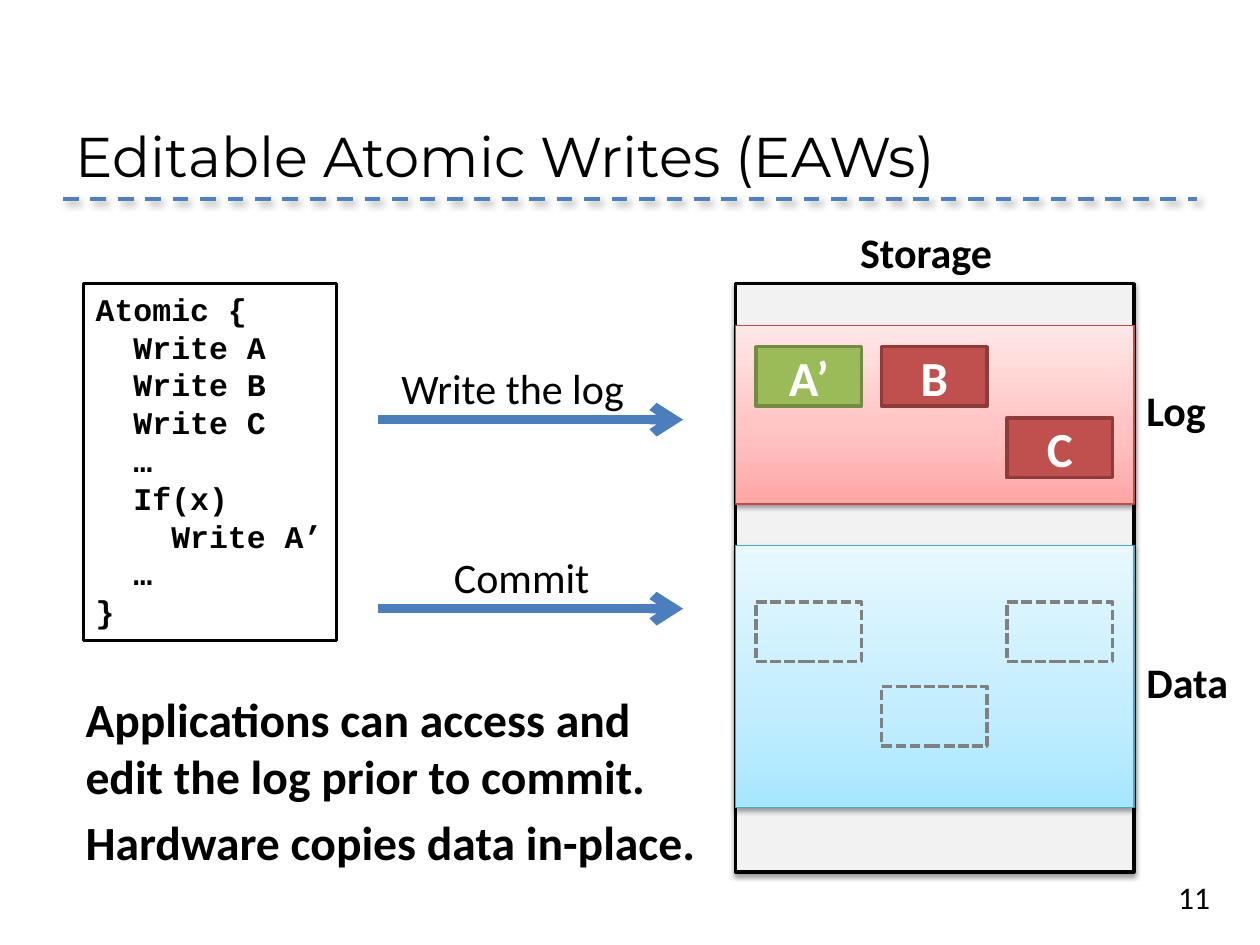
import copy
from dataclasses import dataclass

import pptx
import pptx.dml.color
import pptx.enum.dml
import pptx.enum.shapes
import pptx.enum.text
import pptx.oxml
import pptx.oxml.ns
import pptx.util

Cm, Pt = pptx.util.Cm, pptx.util.Pt
ALIGN = pptx.enum.text.PP_ALIGN
ANCHOR = pptx.enum.text.MSO_ANCHOR
AUTO_SIZE = pptx.enum.text.MSO_AUTO_SIZE
DASH = pptx.enum.dml.MSO_LINE


@dataclass(frozen=True)
class Theme:
    text_font: str = "Calibri"
    title_font: str = "Montserrat"
    code_font: str = "Courier New"
    title_size: float = 32
    block_size: float = 28
    body_size: float = 27.2
    label_size: float = 24
    small_size: float = 18
    ink: str = "000000"
    paper: str = "FFFFFF"
    rule: str = "4F81BD"
    arrow: str = "4B7EBC"
    storage: str = "F2F2F2"
    empty: str = "808080"
    log: tuple = ("FFA6A5", "FFC0BF", "FFE7E7")
    log_edge: str = "BF4C48"
    data: tuple = ("A7E6FF", "C1EDFF", "E7F8FF")
    data_edge: str = "46AAC5"
    new: tuple = ("C0504D", "8E3B39")
    edited: tuple = ("9BBB59", "738A42")


THEME = Theme()


def rgb(value):
    return pptx.dml.color.RGBColor.from_string(value)


def xml(tag, attributes="", inner=""):
    namespace = pptx.oxml.ns.nsdecls("a")
    return pptx.oxml.parse_xml(f"<a:{tag} {namespace} {attributes}>{inner}</a:{tag}>")


def write(frame, text, size=THEME.label_size, font=THEME.text_font, color=THEME.ink,
          bold=False, align=ALIGN.LEFT, anchor=ANCHOR.TOP, wrap=False,
          auto_size=AUTO_SIZE.NONE, gap=0, plain_list=False):
    """Fill a text frame, one paragraph for each line of text."""
    frame.word_wrap, frame.auto_size, frame.vertical_anchor = wrap, auto_size, anchor
    for number, line in enumerate(text.split("\n")):
        paragraph = frame.add_paragraph() if number else frame.paragraphs[0]
        if plain_list:
            properties = paragraph._p.get_or_add_pPr()
            properties.set("marL", "0")
            properties.set("indent", "0")
            properties.append(xml("buNone"))
        paragraph.alignment = align
        paragraph.space_before = Pt(gap if number else 0)
        run = paragraph.add_run()
        run.text = line
        run.font.size, run.font.name, run.font.bold = Pt(size), font, bold
        run.font.color.rgb = rgb(color)


class SlideBuilder:
    def __init__(self, slide, theme):
        self.slide, self.theme = slide, theme

    def placeholder(self, index, box, text, **style):
        holder = self.slide.placeholders[index]
        holder.left, holder.top, holder.width, holder.height = map(Cm, box)
        write(holder.text_frame, text, wrap=True, **style)

    def label(self, box, text, shapes=None, **style):
        textbox = (shapes or self.slide.shapes).add_textbox(*map(Cm, box))
        write(textbox.text_frame, text, auto_size=AUTO_SIZE.SHAPE_TO_FIT_TEXT, **style)

    def outline(self, item, color, width, dash=None):
        item.line.color.rgb = rgb(color)
        item.line.width = Pt(width)
        if dash:
            item.line.dash_style = dash

    def shadow(self, item, opacity=None, blur=0, distance=0, angle=0):
        """Replace the theme's effects by one drop shadow, or by none."""
        effects = xml("effectLst")
        if opacity:
            effects.append(xml(
                "outerShdw",
                f'blurRad="{Pt(blur)}" dist="{Pt(distance)}" dir="{angle * 60000}" rotWithShape="0"',
                f'<a:srgbClr val="{self.theme.ink}"><a:alpha val="{opacity * 1000}"/></a:srgbClr>'))
        item._element.spPr.append(effects)

    def rectangle(self, box, edge, width=2, fill=None, dash=None, raised=False):
        """Draw a rectangle; a tuple of fill colours makes a gradient from the bottom up."""
        shape = self.slide.shapes.add_shape(
            pptx.enum.shapes.MSO_SHAPE.RECTANGLE, *map(Cm, box))
        if isinstance(fill, tuple):
            shape.fill.gradient()
            shape.fill.gradient_angle = 90
            stops = shape._element.spPr.find(".//" + pptx.oxml.ns.qn("a:gsLst"))
            stops.insert(1, copy.deepcopy(stops[0]))
            for stop, position, color in zip(shape.fill.gradient_stops, (0, 0.35, 1), fill):
                stop.position = position
                stop.color.rgb = rgb(color)
        elif fill:
            shape.fill.solid()
            shape.fill.fore_color.rgb = rgb(fill)
        else:
            shape.fill.background()
        self.outline(shape, edge, width, dash)
        self.shadow(shape, *((38, 3.1, 1.6, 90) if raised else ()))
        return shape

    def line(self, left, right, y, color, width, dash=None, shapes=None):
        connector = (shapes or self.slide.shapes).add_connector(
            pptx.enum.shapes.MSO_CONNECTOR.STRAIGHT, Cm(left), Cm(y), Cm(right), Cm(y))
        self.outline(connector, color, width, dash)
        return connector

    def step(self, y, text, label_left, label_width):
        """Group an arrow with the label that sits on it."""
        shapes = self.slide.shapes.add_group_shape().shapes
        arrow = self.line(7.62, 13.77, y, self.theme.arrow, 5.5, shapes=shapes)
        arrow.line._get_or_add_ln().append(xml("tailEnd", 'type="arrow"'))
        self.shadow(arrow)
        self.label((label_left, y - 1.27, label_width, 1.27), text, shapes, align=ALIGN.CENTER)


CODE = """Atomic {
  Write A
  Write B
  Write C
  …
  If(x)
    Write A’
  …
}"""
MESSAGE = """Applications can access and edit the log prior to commit.
Hardware copies data in-place."""


def main():
    deck = pptx.Presentation()
    deck.slide_width, deck.slide_height = Cm(25.4), Cm(19.05)
    theme = THEME
    page = SlideBuilder(deck.slides.add_slide(deck.slide_layouts[1]), theme)

    # Title, rule and page number
    page.label((23.5, 17.58, 1.27, 1.02), "11", size=theme.small_size)
    title_rule = page.line(1.27, 24.13, 4.01, theme.rule, 2.25, DASH.DASH)
    page.shadow(title_rule, 40, 4, 3, 45)
    page.placeholder(0, (1.27, 0.76, 22.86, 3.18), "Editable Atomic Writes (EAWs)",
                     size=theme.title_size, font=theme.title_font, anchor=ANCHOR.BOTTOM)

    # Program
    program = page.rectangle((1.68, 5.72, 5.1, 7.19), theme.ink, 1.5)
    write(program.text_frame, CODE, size=theme.small_size, font=theme.code_font, bold=True)

    # Storage with its log and data areas
    left, width = 14.83, 8.03
    page.rectangle((left, 5.72, width, 11.86), theme.ink, fill=theme.storage, raised=True)
    page.rectangle((left, 6.56, width, 3.6), theme.log_edge, 0.75, theme.log, raised=True)
    page.rectangle((left, 11, width, 5.28), theme.data_edge, 0.75, theme.data, raised=True)
    for text, x, y, label_width in (("Log", 22.86, 7.62, 1.73), ("Data", 22.86, 13.11, 2.18),
                                    ("Storage", 17.09, 4.45, 3.2)):
        page.label((x, y, label_width, 1.27), text, bold=True)

    # Blocks: a log entry and its place in the data area share a column
    blocks = (("A’", theme.edited, 6.99, 12.14),
              ("B", theme.new, 6.99, 13.84),
              ("C", theme.new, 8.43, 12.14))
    for column, (name, (fill, edge), log_top, data_top) in enumerate(blocks):
        x = 15.24 + 2.53 * column
        entry = page.rectangle((x, log_top, 2.13, 1.2), edge, fill=fill)
        write(entry.text_frame, name, size=theme.block_size, color=theme.paper, bold=True,
              align=ALIGN.CENTER, anchor=ANCHOR.MIDDLE, wrap=True)
        page.rectangle((x, data_top, 2.13, 1.2), theme.empty, dash=DASH.SQUARE_DOT)

    # Steps from program to storage
    page.step(8.46, "Write the log", 7.82, 5.03)
    page.step(12.27, "Commit", 8.89, 3.25)

    # Message
    page.placeholder(1, (1.47, 13.77, 12.9, 4.01), MESSAGE, size=theme.body_size, bold=True,
                     gap=5.44, plain_list=True)

    deck.save("out.pptx")


if __name__ == "__main__":
    main()
